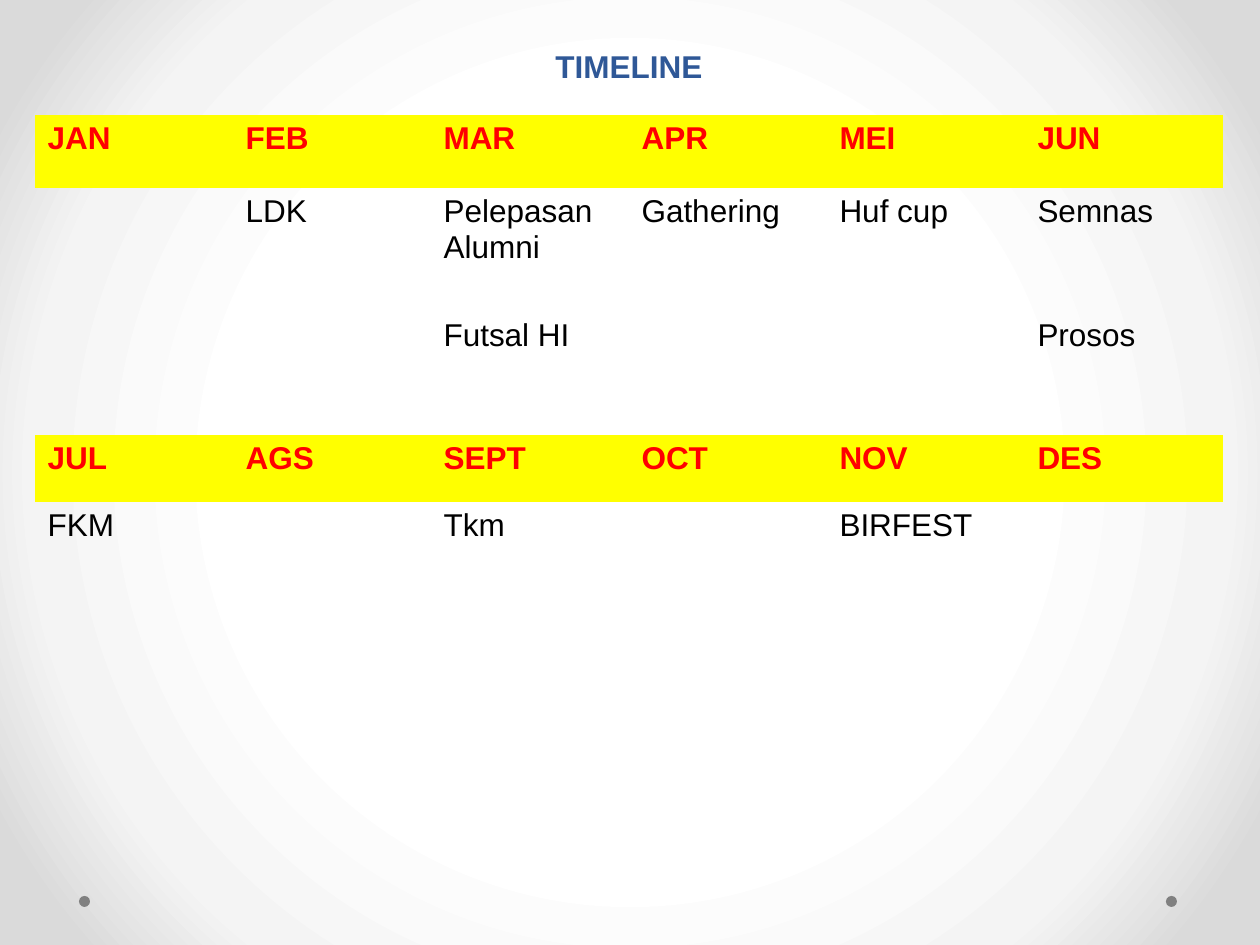
from dataclasses import dataclass

from lxml import etree
from pptx import Presentation
from pptx import util as u
from pptx.dml.color import RGBColor
from pptx.enum import shapes, text
from pptx.oxml.ns import qn

SCALE = 914400 / 126
FONT = "Arial"
NO_GRID_STYLE = "{2D5ABB26-0587-4C30-8999-92F81FD0307C}"

WHITE = RGBColor(0xFF, 0xFF, 0xFF)
BLACK = RGBColor(0x00, 0x00, 0x00)
GREY = RGBColor(0x80, 0x80, 0x80)
BLUE = RGBColor(0x2F, 0x58, 0x97)
RED = RGBColor(0xFF, 0x00, 0x00)
YELLOW = RGBColor(0xFF, 0xFF, 0x00)
BACKDROP = (
    (50, WHITE),
    (76, RGBColor(0xF4, 0xF4, 0xF4)),
    (92, RGBColor(0xDA, 0xDA, 0xDA)),
)

COLUMNS = 6
COLUMN_WIDTH = 198
TABLE_LEFT, TABLE_TOP = 35, 44
DOT_SIZE, DOT_TOP = 11, 896
DOT_LEFTS = (79, 1166)


@dataclass(frozen=True)
class Look:
    color: RGBColor
    bold: bool = False
    fill: RGBColor | None = None
    align: text.PP_ALIGN | None = None


@dataclass(frozen=True)
class Row:
    height: int
    look: Look
    entries: tuple[str, ...]


TITLE = Look(BLUE, bold=True, align=text.PP_ALIGN.CENTER)
MONTHS = Look(RED, bold=True, fill=YELLOW)
EVENTS = Look(BLACK)
EMPTY = ("",) * COLUMNS

ROWS = (
    Row(71, TITLE, ("TIMELINE",) + EMPTY[1:]),
    Row(73, MONTHS, ("JAN", "FEB", "MAR", "APR", "MEI", "JUN")),
    Row(124, EVENTS, ("", "LDK", "Pelepasan\nAlumni", "Gathering", "Huf cup", "Semnas")),
    Row(123, EVENTS, ("", "", "Futsal HI", "", "", "Prosos")),
    Row(67, MONTHS, ("JUL", "AGS", "SEPT", "OCT", "NOV", "DES")),
    Row(123, EVENTS, ("FKM", "", "Tkm", "", "BIRFEST", "")),
    Row(123, EVENTS, EMPTY),
)


def px(length: int) -> u.Emu:
    return u.Emu(round(length * SCALE))


def paint_background(slide) -> None:
    fill = slide.background.fill
    fill.gradient()
    gradient = slide.background._cSld.find(".//" + qn("a:gradFill"))
    for child in list(gradient):
        gradient.remove(child)
    stops = etree.SubElement(gradient, qn("a:gsLst"))
    for position, color in BACKDROP:
        stop = etree.SubElement(stops, qn("a:gs"), pos=str(position * 1000))
        etree.SubElement(stop, qn("a:srgbClr"), val=str(color))
    circle = etree.SubElement(gradient, qn("a:path"), path="circle")
    etree.SubElement(circle, qn("a:fillToRect"), l="50000", t="50000", r="50000", b="50000")


def add_dot(slide, left: int) -> None:
    dot = slide.shapes.add_shape(
        shapes.MSO_SHAPE.OVAL, px(left), px(DOT_TOP), px(DOT_SIZE), px(DOT_SIZE)
    )
    dot.shadow.inherit = False
    dot.fill.solid()
    dot.fill.fore_color.rgb = GREY
    dot.line.fill.background()


def fill_cell(cell, entry: str, look: Look) -> None:
    if look.fill is None:
        cell.fill.background()
    else:
        cell.fill.solid()
        cell.fill.fore_color.rgb = look.fill
    cell.text_frame.text = entry
    for paragraph in cell.text_frame.paragraphs:
        paragraph.alignment = look.align
        paragraph.font.size = u.Pt(18)
        for run in paragraph.runs:
            run.font.name = FONT
            run.font.size = u.Pt(18)
            run.font.bold = look.bold
            run.font.color.rgb = look.color


def add_timeline(slide, rows: tuple[Row, ...]) -> None:
    timeline = slide.shapes.add_table(
        len(rows), COLUMNS, px(TABLE_LEFT), px(TABLE_TOP),
        px(COLUMN_WIDTH * COLUMNS), px(sum(row.height for row in rows)),
    ).table
    timeline.first_row = False
    timeline.horz_banding = False
    timeline._tbl.tblPr.find(qn("a:tableStyleId")).text = NO_GRID_STYLE
    for column in timeline.columns:
        column.width = px(COLUMN_WIDTH)
    for index, row in enumerate(rows):
        timeline.rows[index].height = px(row.height)
        for cell, entry in zip(timeline.rows[index].cells, row.entries):
            fill_cell(cell, entry, row.look)
    timeline.cell(0, 0).merge(timeline.cell(0, COLUMNS - 1))


def main() -> None:
    deck = Presentation()
    deck.slide_width, deck.slide_height = px(1260), px(945)
    slide = deck.slides.add_slide(deck.slide_layouts[6])
    paint_background(slide)
    for left in DOT_LEFTS:
        add_dot(slide, left)
    add_timeline(slide, ROWS)
    deck.save("out.pptx")


if __name__ == "__main__":
    main()
